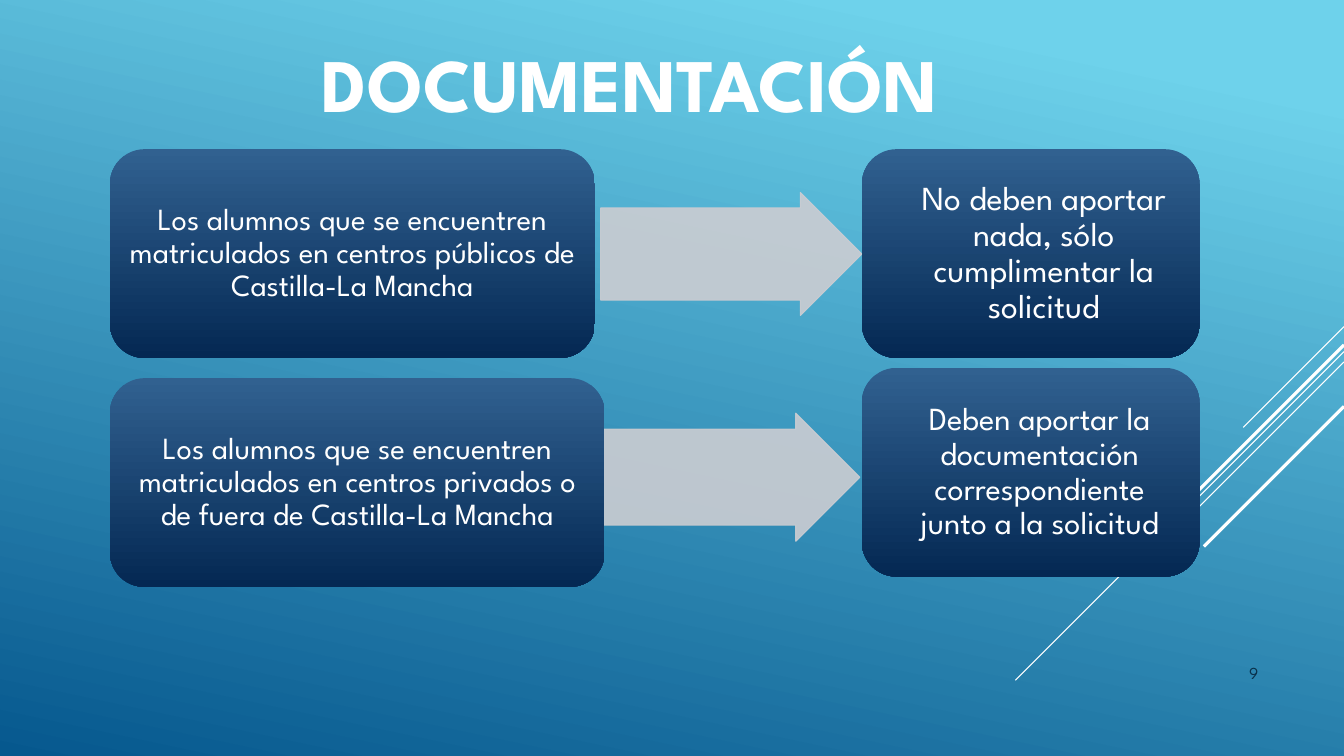
from lxml import etree
from pptx import Presentation
from pptx.dml.color import RGBColor
from pptx.enum.shapes import MSO_CONNECTOR, MSO_SHAPE
from pptx.enum.text import MSO_ANCHOR, PP_ALIGN
from pptx.oxml.ns import qn
from pptx.util import Cm, Pt

STRAIGHT = MSO_CONNECTOR.STRAIGHT
ROUNDED, ARROW = MSO_SHAPE.ROUNDED_RECTANGLE, MSO_SHAPE.RIGHT_ARROW
MIDDLE, BOTTOM = MSO_ANCHOR.MIDDLE, MSO_ANCHOR.BOTTOM
CENTER, RIGHT = PP_ALIGN.CENTER, PP_ALIGN.RIGHT
WHITE, SILVER, NAVY = "FFFFFF", "CCCDD2", "0A304A"
FONT = "League Spartan"
SLIDE_WIDTH, SLIDE_HEIGHT = 33.87, 19.05


def paint(fill, *colors, angle=90, start=0):
    """Fill with one colour, or with a gradient turned clockwise by angle."""
    if len(colors) == 1:
        fill.solid()
        fill.fore_color.rgb = RGBColor.from_string(colors[0])
        return
    fill.gradient()
    fill.gradient_angle = 360 - angle
    for stop, color, position in zip(fill.gradient_stops, colors, (start, 1)):
        stop.color.rgb = RGBColor.from_string(color)
        stop.position = position


def write(shape, text, size, color=WHITE, bold=False, align=CENTER,
          anchor=MIDDLE, spacing=0.9, left=0.25, right=0.25):
    frame = shape.text_frame
    frame.word_wrap = True
    frame.vertical_anchor = anchor
    frame.margin_left, frame.margin_right = Cm(left), Cm(right)
    paragraph = frame.paragraphs[0]
    paragraph.alignment = align
    paragraph.line_spacing = spacing
    run = paragraph.add_run()
    run.text = text
    run.font.name, run.font.size, run.font.bold = FONT, Pt(size), bold
    run.font.color.rgb = RGBColor.from_string(color)


presentation = Presentation()
presentation.slide_width, presentation.slide_height = Cm(SLIDE_WIDTH), Cm(SLIDE_HEIGHT)
slide = presentation.slides.add_slide(presentation.slide_layouts[6])
shapes = slide.shapes
paint(slide.background.fill, "6ED2EB", "06588E", angle=102, start=0.1)

# Diagonal rays, falling at 45 degrees from the right edge: top, run, weight
for top, reach, weight in [(8.23, 2.54, 0.75), (8.86, 8.28, 0.75), (9.12, 5.26, 0.75),
                           (8.69, 4.85, 2.25), (10.24, 3.53, 2.25)]:
    ray = shapes.add_connector(STRAIGHT, Cm(SLIDE_WIDTH), Cm(top),
                               Cm(SLIDE_WIDTH - reach), Cm(top + reach))
    paint(ray.line.fill, WHITE)
    ray.line.width = Pt(weight)
    etree.SubElement(ray._element.spPr, qn("a:effectLst"))

# Title and page number
title = shapes.add_textbox(Cm(1.91), Cm(0.66), Cm(27.94), Cm(3.12))
write(title, "DOCUMENTACIÓN", 54, bold=True)
page_number = shapes.add_textbox(Cm(28.78), Cm(15.49), Cm(3.18), Cm(1.85))
write(page_number, "9", 12, NAVY, align=RIGHT, anchor=BOTTOM, spacing=1)

# Arrows from each case to its requirement
for left, top, height in [(15.14, 4.85, 3.1), (15.09, 10.41, 3.23)]:
    arrow = shapes.add_shape(ARROW, Cm(left), Cm(top), Cm(6.58), Cm(height))
    arrow.shadow.inherit = False
    arrow.adjustments[0], arrow.adjustments[1] = 0.75, 0.5
    paint(arrow.fill, SILVER)
    paint(arrow.line.fill, SILVER)
    arrow.line.width = Pt(0.75)
    for color in arrow._element.spPr.iter(qn("a:srgbClr")):
        etree.SubElement(color, qn("a:alpha"), val="90000")

# Cases on the left, requirements on the right
cards = [
    (2.77, 3.76, 12.22, 22, 0.23, 0.23,
     "Los alumnos que se encuentren matriculados en centros públicos de Castilla-La Mancha"),
    (2.77, 9.53, 12.47, 22, 0.23, 0.23,
     "Los alumnos que se encuentren matriculados en centros privados o de fuera de "
     "Castilla-La Mancha"),
    (21.72, 3.76, 8.51, 24, 0.94, 0.28,
     "No deben aportar nada, sólo cumplimentar la solicitud"),
    (21.72, 9.27, 8.51, 23, 0.69, 0.23,
     "Deben aportar la documentación correspondiente junto a la solicitud"),
]
for left, top, width, size, inset_left, inset_right, text in cards:
    card = shapes.add_shape(ROUNDED, Cm(left), Cm(top), Cm(width), Cm(5.26))
    card.shadow.inherit = False
    paint(card.fill, "316190", "042853")
    card.line.fill.background()
    write(card, text, size, left=inset_left, right=inset_right)

presentation.save("out.pptx")
